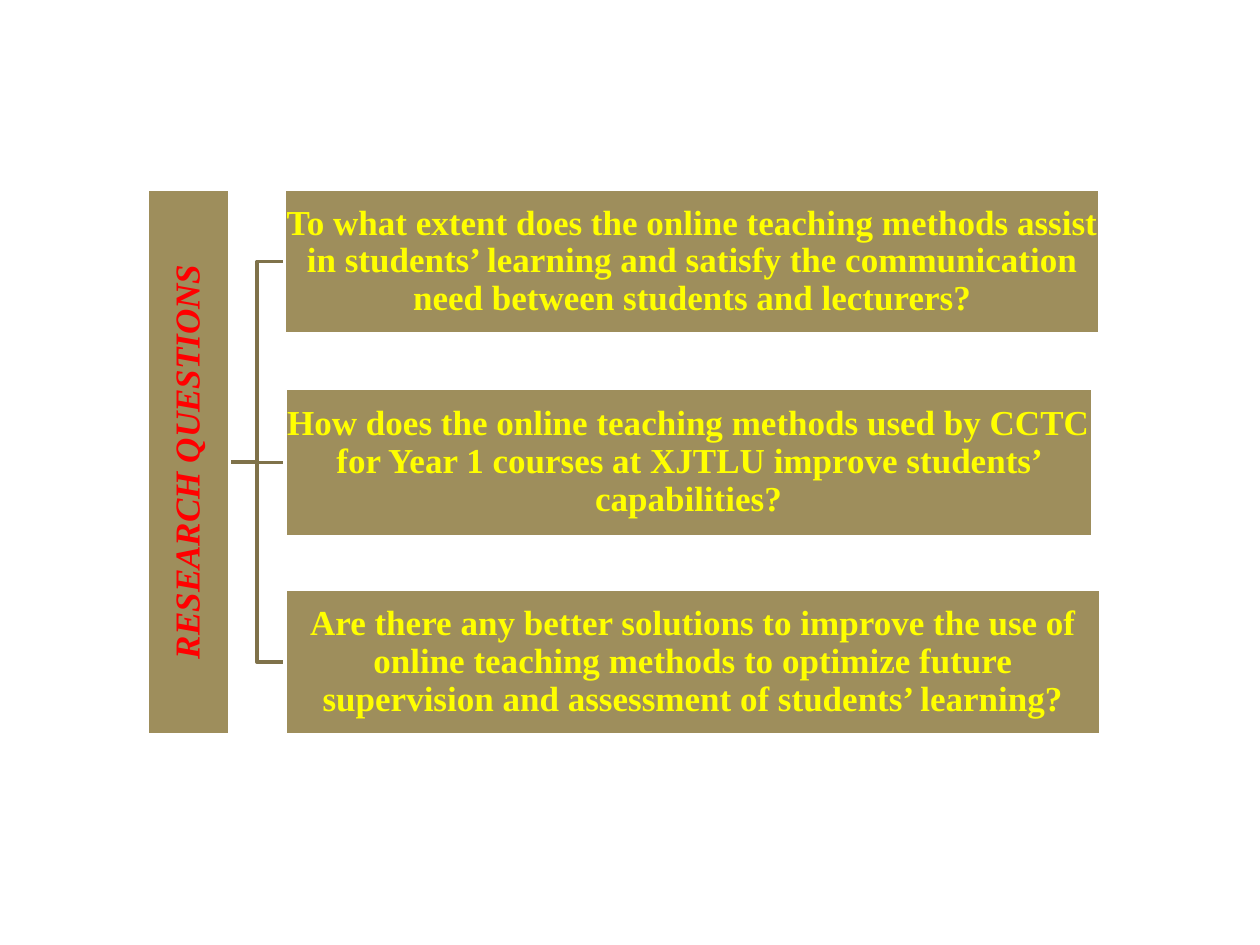
"""Build a slide that branches a vertical heading into three research questions."""
from dataclasses import dataclass

from pptx import Presentation
from pptx.dml.color import RGBColor
from pptx.enum.shapes import MSO_SHAPE
from pptx.enum.text import MSO_ANCHOR, PP_ALIGN
from pptx.util import Inches, Pt

HEADING = "RESEARCH QUESTIONS"
HEADING_BOX = (-0.67, 3.34, 4.33, 0.65)
QUESTION_LEFT = 2.26
QUESTIONS = [
    ("To what extent does the online teaching methods assist in students’ learning "
     "and satisfy the communication need between students and lecturers?",
     (QUESTION_LEFT, 1.5, 6.47, 1.15)),
    ("How does the online teaching methods used by CCTC for Year 1 courses at XJTLU "
     "improve students’ capabilities?",
     (QUESTION_LEFT, 3.08, 6.41, 1.18)),
    ("Are there any better solutions to improve the use of online teaching methods "
     "to optimize future supervision and assessment of students’ learning?",
     (QUESTION_LEFT, 4.68, 6.48, 1.15)),
]


@dataclass(frozen=True)
class Theme:
    font: str = "Times New Roman"
    size: Pt = Pt(20)
    line_width: Pt = Pt(2)
    inset: Inches = Inches(0.01)
    box: RGBColor = RGBColor(0x9E, 0x8E, 0x5C)
    border: RGBColor = RGBColor(0xFF, 0xFF, 0xFF)
    branch: RGBColor = RGBColor(0x7F, 0x72, 0x4A)
    heading: RGBColor = RGBColor(0xFF, 0x00, 0x00)
    question: RGBColor = RGBColor(0xFF, 0xFF, 0x00)


THEME = Theme()


def set_line(shape, color):
    shape.shadow.inherit = False
    shape.line.color.rgb = color
    shape.line.width = THEME.line_width


def add_branch(slide, start, end):
    middle = (start[0] + end[0]) / 2
    corners = [start, (middle, start[1]), (middle, end[1]), end]
    points = [(Inches(x), Inches(y)) for x, y in corners]
    builder = slide.shapes.build_freeform(*points[0])
    builder.add_line_segments(points[1:], close=False)
    shape = builder.convert_to_shape()
    shape.fill.background()
    set_line(shape, THEME.branch)


def add_box(slide, text, box, color, italic=False, rotation=0):
    shape = slide.shapes.add_shape(MSO_SHAPE.RECTANGLE, *map(Inches, box))
    shape.rotation = rotation
    shape.fill.solid()
    shape.fill.fore_color.rgb = THEME.box
    set_line(shape, THEME.border)
    frame = shape.text_frame
    frame.word_wrap = True
    frame.vertical_anchor = MSO_ANCHOR.MIDDLE
    frame.margin_left = frame.margin_right = THEME.inset
    frame.margin_top = frame.margin_bottom = THEME.inset
    paragraph = frame.paragraphs[0]
    paragraph.text = text
    paragraph.alignment = PP_ALIGN.CENTER
    paragraph.line_spacing = 0.9
    font = paragraph.font
    font.name = THEME.font
    font.size = THEME.size
    font.bold = True
    font.italic = italic
    font.color.rgb = color


def main():
    presentation = Presentation()
    presentation.slide_width = Inches(10)
    presentation.slide_height = Inches(7.5)
    slide = presentation.slides.add_slide(presentation.slide_layouts[6])

    left, top, width, height = HEADING_BOX
    start = (left + (width + height) / 2, top + height / 2)
    for _, box in reversed(QUESTIONS):
        add_branch(slide, start, (box[0], box[1] + box[3] / 2))

    add_box(slide, HEADING, HEADING_BOX, THEME.heading, italic=True, rotation=270)
    for text, box in QUESTIONS:
        add_box(slide, text, box, THEME.question)
    presentation.save("out.pptx")


if __name__ == "__main__":
    main()
